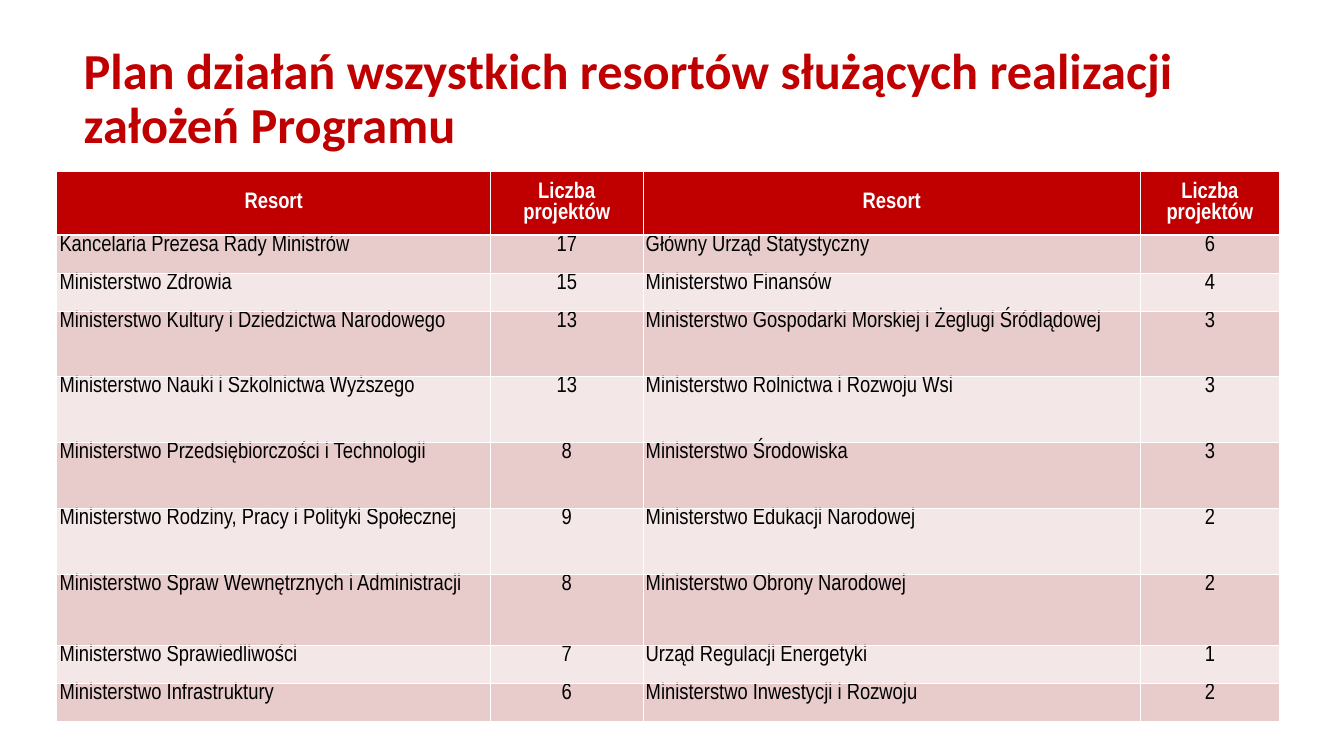
from dataclasses import dataclass

from lxml.etree import SubElement
from pptx import Presentation
from pptx.dml.color import RGBColor
from pptx.enum.text import MSO_ANCHOR, PP_ALIGN
from pptx.oxml.ns import qn
from pptx.util import Pt


@dataclass(frozen=True)
class Theme:
    red: str = "C00000"
    white: str = "FFFFFF"
    black: str = "000000"
    bands: tuple = ("E8CCCC", "F4E7E7")
    title_font: str = "Calibri"
    table_font: str = "Arial Narrow"
    title_size: int = 72
    table_size: int = 32


THEME = Theme()

TITLE = "Plan działań wszystkich resortów służących realizacji założeń Programu"
HEADER = ("Resort", "Liczba projektów") * 2
MINISTRIES = [
    ("Kancelaria Prezesa Rady Ministrów", 17, "Główny Urząd Statystyczny", 6),
    ("Ministerstwo Zdrowia", 15, "Ministerstwo Finansów", 4),
    ("Ministerstwo Kultury i Dziedzictwa Narodowego", 13,
     "Ministerstwo Gospodarki Morskiej i Żeglugi Śródlądowej", 3),
    ("Ministerstwo Nauki i Szkolnictwa Wyższego", 13, "Ministerstwo Rolnictwa i Rozwoju Wsi", 3),
    ("Ministerstwo Przedsiębiorczości i Technologii", 8, "Ministerstwo Środowiska", 3),
    ("Ministerstwo Rodziny, Pracy i Polityki Społecznej", 9, "Ministerstwo Edukacji Narodowej", 2),
    ("Ministerstwo Spraw Wewnętrznych i Administracji", 8, "Ministerstwo Obrony Narodowej", 2),
    ("Ministerstwo Sprawiedliwości", 7, "Urząd Regulacji Energetyki", 1),
    ("Ministerstwo Infrastruktury", 6, "Ministerstwo Inwestycji i Rozwoju", 2),
]
COLUMN_WIDTHS = (620, 217.5, 711, 198)
ROW_HEIGHTS = (90.5, 54.3, 54.3, 94, 94, 94, 94, 101.5, 54.3, 54.3)


def format_text(paragraph, font_name, size, color, bold):
    for run in paragraph.runs:
        run.font.name = font_name
        run.font.size = Pt(size)
        run.font.bold = bold
        run.font.color.rgb = RGBColor.from_string(color)


def set_borders(cell, top, bottom):
    """White cell lines; top and bottom are widths in points."""
    properties = cell._tc.get_or_add_tcPr()
    for tag, width in (("a:lnL", 1), ("a:lnR", 1), ("a:lnT", top), ("a:lnB", bottom)):
        line = SubElement(properties, qn(tag), w=str(Pt(width)))
        fill = SubElement(line, qn("a:solidFill"))
        SubElement(fill, qn("a:srgbClr"), val=THEME.white)


def add_title(slide, left, top, width, height):
    box = slide.shapes.add_textbox(Pt(left), Pt(top), Pt(width), Pt(height))
    frame = box.text_frame
    frame.word_wrap = True
    frame.vertical_anchor = MSO_ANCHOR.MIDDLE
    frame.margin_left = Pt(3)
    frame.text = TITLE
    paragraph = frame.paragraphs[0]
    paragraph.line_spacing = 0.9
    format_text(paragraph, THEME.title_font, THEME.title_size, THEME.red, True)


def fill_cell(cell, value, row, column):
    is_header = row == 0
    cell.margin_left = cell.margin_right = Pt(4)
    cell.margin_top = cell.margin_bottom = 0
    cell.vertical_anchor = MSO_ANCHOR.MIDDLE if is_header else MSO_ANCHOR.TOP
    cell.text_frame.text = str(value)
    paragraph = cell.text_frame.paragraphs[0]
    centred = is_header or column % 2 == 1
    paragraph.alignment = PP_ALIGN.CENTER if centred else PP_ALIGN.LEFT
    format_text(paragraph, THEME.table_font, THEME.table_size,
                THEME.white if is_header else THEME.black, is_header)
    set_borders(cell, top=3 if row == 1 else 1, bottom=3 if is_header else 1)
    cell.fill.solid()
    background = THEME.red if is_header else THEME.bands[(row - 1) % 2]
    cell.fill.fore_color.rgb = RGBColor.from_string(background)


def add_ministry_table(slide, left, top):
    rows = [HEADER, *MINISTRIES]
    table = slide.shapes.add_table(
        len(rows), len(HEADER), Pt(left), Pt(top),
        Pt(sum(COLUMN_WIDTHS)), Pt(sum(ROW_HEIGHTS))).table
    for column, width in zip(table.columns, COLUMN_WIDTHS):
        column.width = Pt(width)
    for row, height in zip(table.rows, ROW_HEIGHTS):
        row.height = Pt(height)
    for row, values in enumerate(rows):
        for column, value in enumerate(values):
            fill_cell(table.cell(row, column), value, row, column)


def main():
    presentation = Presentation()
    presentation.slide_width = Pt(1920)
    presentation.slide_height = Pt(1080)
    slide = presentation.slides.add_slide(presentation.slide_layouts[6])
    add_title(slide, 116.5, 57.5, 1656, 171.5)
    add_ministry_table(slide, 81, 245)
    presentation.save("out.pptx")


if __name__ == "__main__":
    main()
